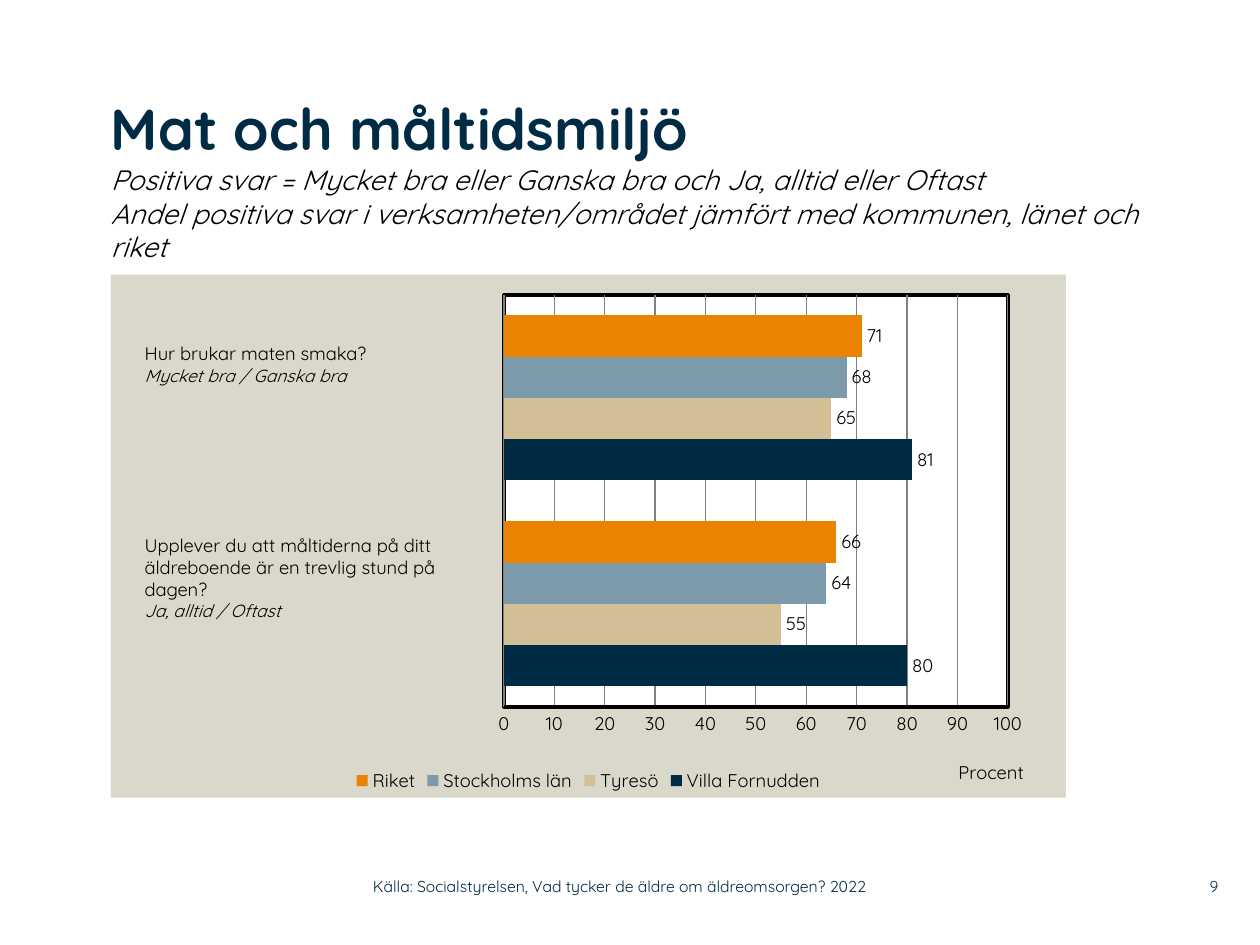
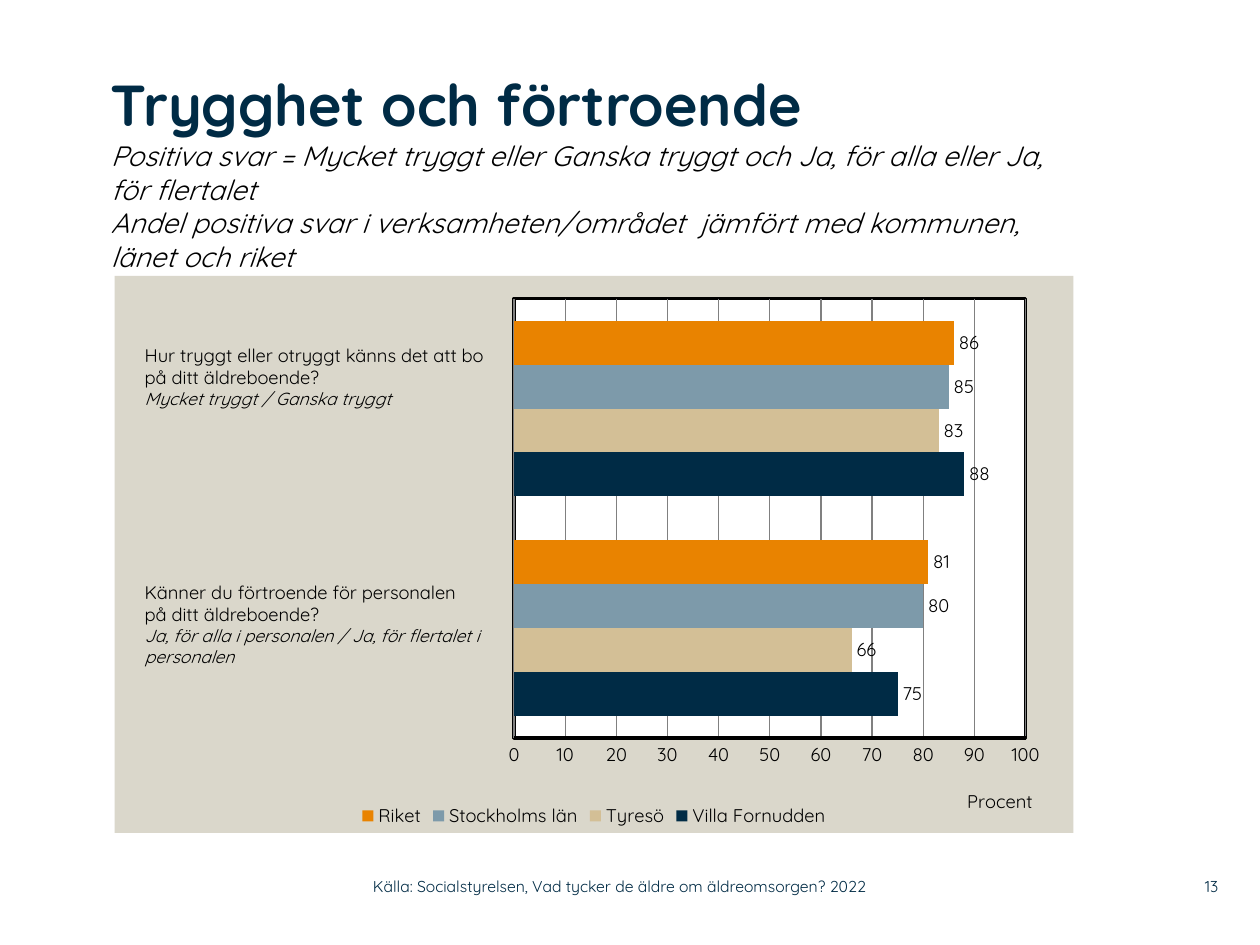
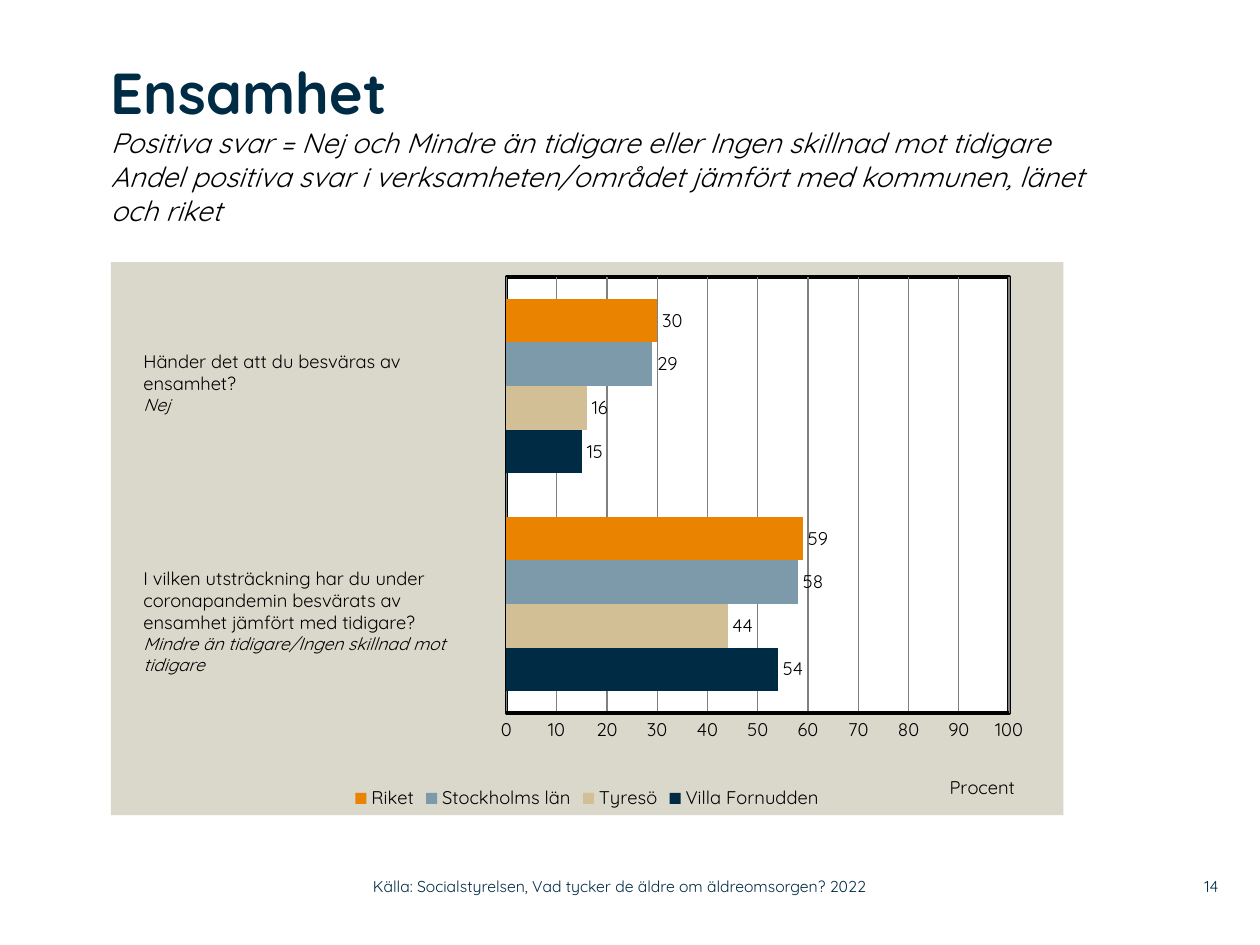
from dataclasses import dataclass
from typing import NamedTuple

from lxml import etree
from pptx import Presentation
from pptx import util as u
from pptx.chart.data import CategoryChartData
from pptx.dml.color import RGBColor
from pptx.enum import chart as charts, text
from pptx.oxml import parse_xml
from pptx.oxml.ns import nsdecls, qn


# Shared look
@dataclass(frozen=True)
class Theme:
    font: str = "Quicksand"
    navy: str = "002B45"
    black: str = "000000"
    white: str = "FFFFFF"
    panel: str = "DAD7CB"
    grid: str = "808080"
    title: float = 33
    subtitle: float = 16
    body: float = 10.5
    answer: float = 10
    footer: float = 9
    frame: float = 2


THEME = Theme()
SOURCE = "Källa: Socialstyrelsen, Vad tycker de äldre om äldreomsorgen? 2022"
SUMMARY = "Andel positiva svar i verksamheten/området jämfört med kommunen, länet och riket"
SERIES = {
    "Villa Fornudden": THEME.navy,
    "Tyresö": "D3BF96",
    "Stockholms län": "7D9AAA",
    "Riket": "E98300",
}


class Box(NamedTuple):
    left: float
    top: float
    width: float
    height: float


class Line(NamedTuple):
    text: str
    size: float
    color: str = THEME.black
    bold: bool = False
    italic: bool = False


@dataclass(frozen=True)
class Question:
    box: Box
    wording: list[str]
    answer: str


@dataclass(frozen=True)
class ResultSlide:
    number: int
    title: str
    title_box: Box
    subtitles: list[str]
    chart_box: Box
    plot_box: Box  # relative to the chart
    unit_at: tuple[float, float]  # relative to the chart
    values: list[tuple[int, int]]  # lower and upper question, in SERIES order
    questions: list[Question]


RESULTS = [
    ResultSlide(
        9, "Mat och måltidsmiljö", Box(0.88, 0.74, 8.42, 1.44),
        ["Positiva svar = Mycket bra eller Ganska bra och Ja, alltid eller Oftast", SUMMARY],
        Box(0.88, 2.18, 7.58, 4.15), Box(3.12, 0.16, 4, 3.27), (6.7, 3.82),
        [(80, 81), (55, 65), (64, 68), (66, 71)],
        [
            Question(Box(1.05, 2.67, 2.77, 0.63), ["Hur brukar maten smaka?"],
                     "Mycket bra / Ganska bra"),
            Question(Box(1.05, 4.19, 2.77, 0.98),
                     ["Upplever du att måltiderna på ditt äldreboende är en trevlig stund på",
                      "dagen?"],
                     "Ja, alltid / Oftast"),
        ],
    ),
    ResultSlide(
        13, "Trygghet och förtroende", Box(0.88, 0.55, 7.75, 1.64),
        ["Positiva svar = Mycket tryggt eller Ganska tryggt och Ja, för alla eller Ja, "
         "för flertalet",
         SUMMARY.replace("området ", "området  ")],
        Box(0.91, 2.19, 7.61, 4.42), Box(3.17, 0.18, 4.06, 3.49), (6.74, 4.04),
        [(75, 88), (66, 83), (80, 85), (81, 86)],
        [
            Question(Box(1.05, 2.68, 2.98, 0.81),
                     ["Hur tryggt eller otryggt känns det att bo på ditt äldreboende?"],
                     "Mycket tryggt / Ganska tryggt"),
            Question(Box(1.05, 4.56, 3, 0.98),
                     ["Känner du förtroende för personalen", "på ditt äldreboende?"],
                     "Ja, för alla i personalen / Ja, för flertalet i personalen"),
        ],
    ),
    ResultSlide(
        14, "Ensamhet", Box(0.88, 0.45, 7.81, 1.64),
        ["Positiva svar = Nej och Mindre än tidigare eller Ingen skillnad mot tidigare", SUMMARY],
        Box(0.88, 2.08, 7.56, 4.39), Box(3.14, 0.12, 3.99, 3.46), (6.63, 4.04),
        [(54, 15), (44, 16), (58, 29), (59, 30)],
        [
            Question(Box(1.04, 2.73, 2.94, 0.63),
                     ["Händer det att du besväras av", "ensamhet?"], "Nej"),
            Question(Box(1.04, 4.45, 2.94, 0.97),
                     ["I vilken utsträckning har du under coronapandemin besvärats av "
                      "ensamhet jämfört med tidigare?"],
                     "Mindre än tidigare/Ingen skillnad mot tidigare"),
        ],
    ),
]


# Text
def style_font(font, size: float, color: str = THEME.black,
               bold: bool = False, italic: bool = False) -> None:
    font.name, font.size = THEME.font, u.Pt(size)
    font.bold, font.italic = bold, italic
    font.color.rgb = RGBColor.from_string(color)


def add_text(slide, box: Box, lines: list[Line], inset: bool = False,
             anchor=text.MSO_ANCHOR.TOP, align=text.PP_ALIGN.LEFT):
    shape = slide.shapes.add_textbox(*map(u.Inches, box))
    frame = shape.text_frame
    frame.word_wrap = True
    frame.vertical_anchor = anchor
    if not inset:
        frame.margin_left = frame.margin_right = frame.margin_top = frame.margin_bottom = 0
    frame.text = "\n".join(line.text for line in lines)
    for paragraph, line in zip(frame.paragraphs, lines):
        paragraph.alignment = align
        for run in paragraph.runs:
            style_font(run.font, *line[1:])
    return shape


def add_question(slide, question: Question) -> None:
    lines = [Line(part, THEME.body) for part in question.wording]
    lines.append(Line(question.answer, THEME.answer, italic=True))
    shape = add_text(slide, question.box, lines, inset=True)
    shape.text_frame.auto_size = text.MSO_AUTO_SIZE.SHAPE_TO_FIT_TEXT


def add_footer(slide, number: int) -> None:
    for box, words, align in (
        (Box(2.96, 6.89, 4.43, 0.29), SOURCE, text.PP_ALIGN.LEFT),
        (Box(9.2, 6.89, 0.47, 0.29), str(number), text.PP_ALIGN.RIGHT),
    ):
        add_text(slide, box, [Line(words, THEME.footer, THEME.navy)],
                 anchor=text.MSO_ANCHOR.MIDDLE, align=align)


# Chart parts that need XML
def area_format(fill: str, line: str = ""):
    outline = (f'<a:solidFill><a:srgbClr val="{line}"/></a:solidFill>'
               if line else "<a:noFill/>")
    return parse_xml(
        f'<c:spPr {nsdecls("c", "a")}><a:solidFill><a:srgbClr val="{fill}"/></a:solidFill>'
        f'<a:ln w="{u.Pt(THEME.frame)}">{outline}</a:ln></c:spPr>')


def set_layout(element, fractions: dict[str, float], inner: bool = False) -> None:
    layout = element.find(qn("c:layout"))
    if layout is None:
        layout = etree.Element(qn("c:layout"))
        element.insert(0, layout)
    manual = etree.SubElement(layout, qn("c:manualLayout"))
    settings = {"layoutTarget": "inner"} if inner else {}
    settings |= {"xMode": "edge", "yMode": "edge"}
    settings |= {key: f"{value:.4f}" for key, value in fractions.items()}
    for key, value in settings.items():
        etree.SubElement(manual, qn(f"c:{key}")).set("val", value)


def style_value_axis(axis) -> None:
    axis.minimum_scale, axis.maximum_scale, axis.major_unit = 0, 100, 10
    axis.major_tick_mark = axis.minor_tick_mark = charts.XL_TICK_MARK.NONE
    axis.format.line.width = u.Pt(THEME.frame)
    axis.format.line.color.rgb = RGBColor.from_string(THEME.black)
    axis.has_major_gridlines = True
    axis.major_gridlines.format.line.width = u.Pt(0.75)
    axis.major_gridlines.format.line.color.rgb = RGBColor.from_string(THEME.grid)
    style_font(axis.tick_labels.font, THEME.body)
    frame = axis.axis_title.text_frame
    frame.text = "Procent"
    style_font(frame.paragraphs[0].runs[0].font, THEME.body)


def add_result_chart(slide, result: ResultSlide) -> None:
    data = CategoryChartData(number_format="0")
    data.categories = ["1", "2"]
    for name, values in zip(SERIES, result.values):
        data.add_series(name, values)
    chart = slide.shapes.add_chart(
        charts.XL_CHART_TYPE.BAR_CLUSTERED, *map(u.Inches, result.chart_box), data).chart
    style_font(chart.font, THEME.body)
    chart.has_title = False
    chart.has_legend = True
    chart.legend.position = charts.XL_LEGEND_POSITION.BOTTOM
    chart.legend.include_in_layout = False
    style_font(chart.legend.font, THEME.body)
    chart.category_axis.visible = False
    style_value_axis(chart.value_axis)

    # Bars and their values
    plot = chart.plots[0]
    plot.gap_width, plot.overlap = 100, 0
    plot.vary_by_categories = False
    for series, color in zip(plot.series, SERIES.values()):
        series.format.fill.solid()
        series.format.fill.fore_color.rgb = RGBColor.from_string(color)
        labels = series.data_labels
        labels.show_value = True
        labels.position = charts.XL_LABEL_POSITION.OUTSIDE_END
        style_font(labels.font, THEME.body)

    # Panel, plot frame and placement
    panel = chart.element.find(qn("c:chart"))
    panel.addnext(area_format(THEME.panel))
    plot_area = panel.find(qn("c:plotArea"))
    plot_area.append(area_format(THEME.white, THEME.black))
    width, height = result.chart_box.width, result.chart_box.height
    area = result.plot_box
    set_layout(plot_area, {"x": area.left / width, "y": area.top / height,
                           "w": area.width / width, "h": area.height / height}, inner=True)
    left, top = result.unit_at
    set_layout(plot_area.find(f"{qn('c:valAx')}/{qn('c:title')}"),
               {"x": left / width, "y": top / height})


def add_result_slide(presentation, result: ResultSlide) -> None:
    slide = presentation.slides.add_slide(presentation.slide_layouts[6])
    heading = [Line(result.title, THEME.title, THEME.navy, bold=True)]
    heading += [Line(words, THEME.subtitle, italic=True) for words in result.subtitles]
    add_text(slide, result.title_box, heading)
    add_result_chart(slide, result)
    for question in result.questions:
        add_question(slide, question)
    add_footer(slide, result.number)


def main() -> None:
    presentation = Presentation()
    presentation.slide_width, presentation.slide_height = u.Inches(10), u.Inches(7.5)
    for result in RESULTS:
        add_result_slide(presentation, result)
    presentation.save("out.pptx")


if __name__ == "__main__":
    main()
